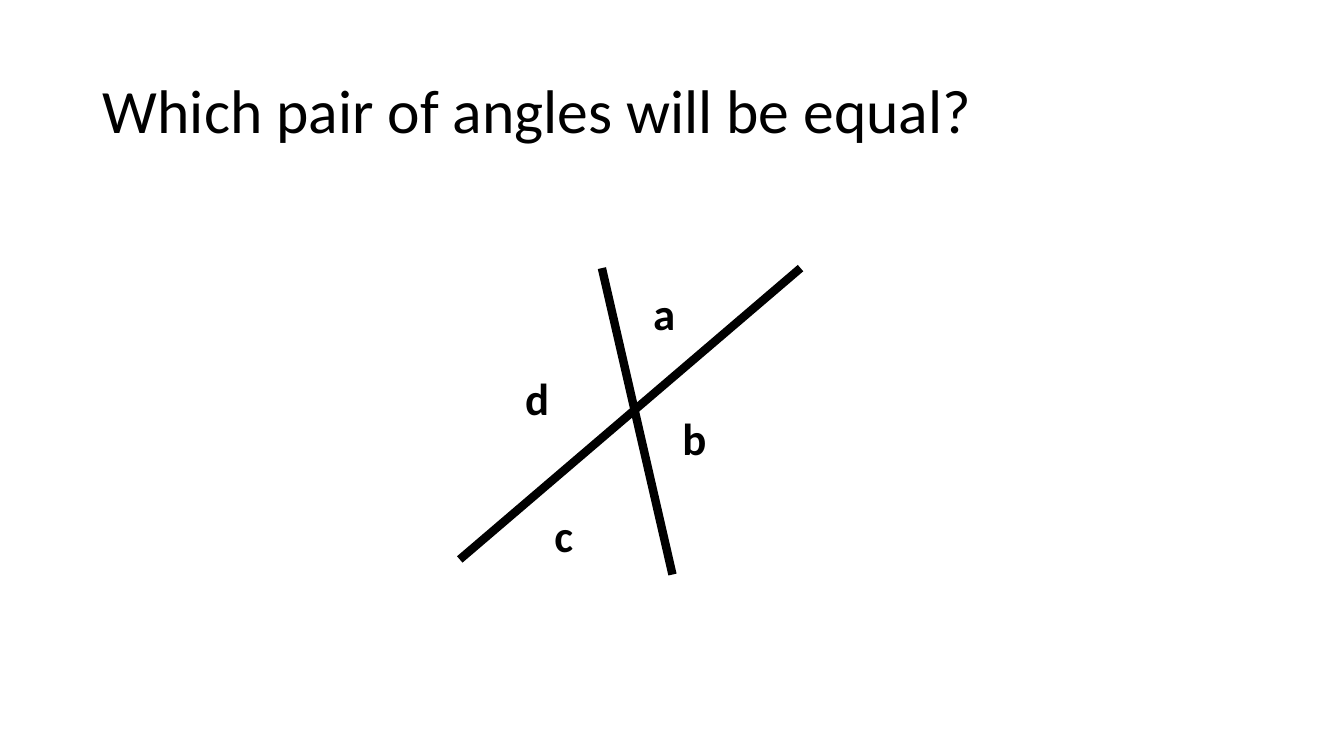
from dataclasses import dataclass

from pptx import Presentation
from pptx import util as u
from pptx.dml.color import RGBColor
from pptx.enum import shapes, text
from pptx.oxml.ns import qn
from pptx.slide import Slide
from pptx.text.text import TextFrame

BLACK = RGBColor(0x00, 0x00, 0x00)
FONT = "Calibri"
LABEL_WIDTH, LABEL_HEIGHT = 0.57, 0.64


@dataclass(frozen=True)
class Ray:
    start_x: float
    start_y: float
    end_x: float
    end_y: float


@dataclass(frozen=True)
class AngleLabel:
    name: str
    left: float
    top: float


RAYS = [Ray(7.94, 2.66, 4.56, 5.55), Ray(5.97, 2.66, 6.67, 5.7)]
LABELS = [
    AngleLabel("a", 6.38, 2.79),
    AngleLabel("b", 6.67, 4.03),
    AngleLabel("c", 5.4, 4.99),
    AngleLabel("d", 5.11, 3.63),
]


def write_text(frame: TextFrame, words: str, *, size: float, bold: bool = False,
               anchor: text.MSO_ANCHOR = text.MSO_ANCHOR.TOP,
               fit: text.MSO_AUTO_SIZE = text.MSO_AUTO_SIZE.NONE,
               line_spacing: float = 1.0) -> None:
    frame.word_wrap = True
    frame.auto_size = fit
    frame.vertical_anchor = anchor
    para = frame.paragraphs[0]
    para.alignment = text.PP_ALIGN.LEFT
    para.line_spacing = line_spacing
    span = para.add_run()
    span.text = words
    span.font.name = FONT
    span.font.size = u.Pt(size)
    span.font.bold = bold
    span.font.color.rgb = BLACK


def draw_title(page: Slide, words: str) -> None:
    title = page.shapes.title
    title.left, title.top = u.Inches(0.92), u.Inches(0.4)
    title.width, title.height = u.Inches(11.5), u.Inches(1.45)
    write_text(title.text_frame, words, size=44,
               anchor=text.MSO_ANCHOR.MIDDLE, line_spacing=0.9)


def draw_ray(page: Slide, ray: Ray) -> None:
    line = page.shapes.add_connector(
        shapes.MSO_CONNECTOR.STRAIGHT,
        u.Inches(ray.start_x), u.Inches(ray.start_y),
        u.Inches(ray.end_x), u.Inches(ray.end_y))
    line.line.color.rgb = BLACK
    line.line.width = u.Pt(6)
    properties = line.element.spPr
    properties.append(properties.makeelement(qn("a:effectLst"), {}))


def draw_label(page: Slide, label: AngleLabel) -> None:
    box = page.shapes.add_textbox(
        u.Inches(label.left), u.Inches(label.top),
        u.Inches(LABEL_WIDTH), u.Inches(LABEL_HEIGHT))
    write_text(box.text_frame, label.name, size=32, bold=True,
               fit=text.MSO_AUTO_SIZE.SHAPE_TO_FIT_TEXT)


def main() -> None:
    deck = Presentation()
    deck.slide_width, deck.slide_height = u.Inches(13.33), u.Inches(7.5)
    page = deck.slides.add_slide(deck.slide_layouts.get_by_name("Title Only"))
    draw_title(page, "Which pair of angles will be equal?")
    for ray in RAYS:
        draw_ray(page, ray)
    for label in LABELS:
        draw_label(page, label)
    deck.save("out.pptx")


if __name__ == "__main__":
    main()
